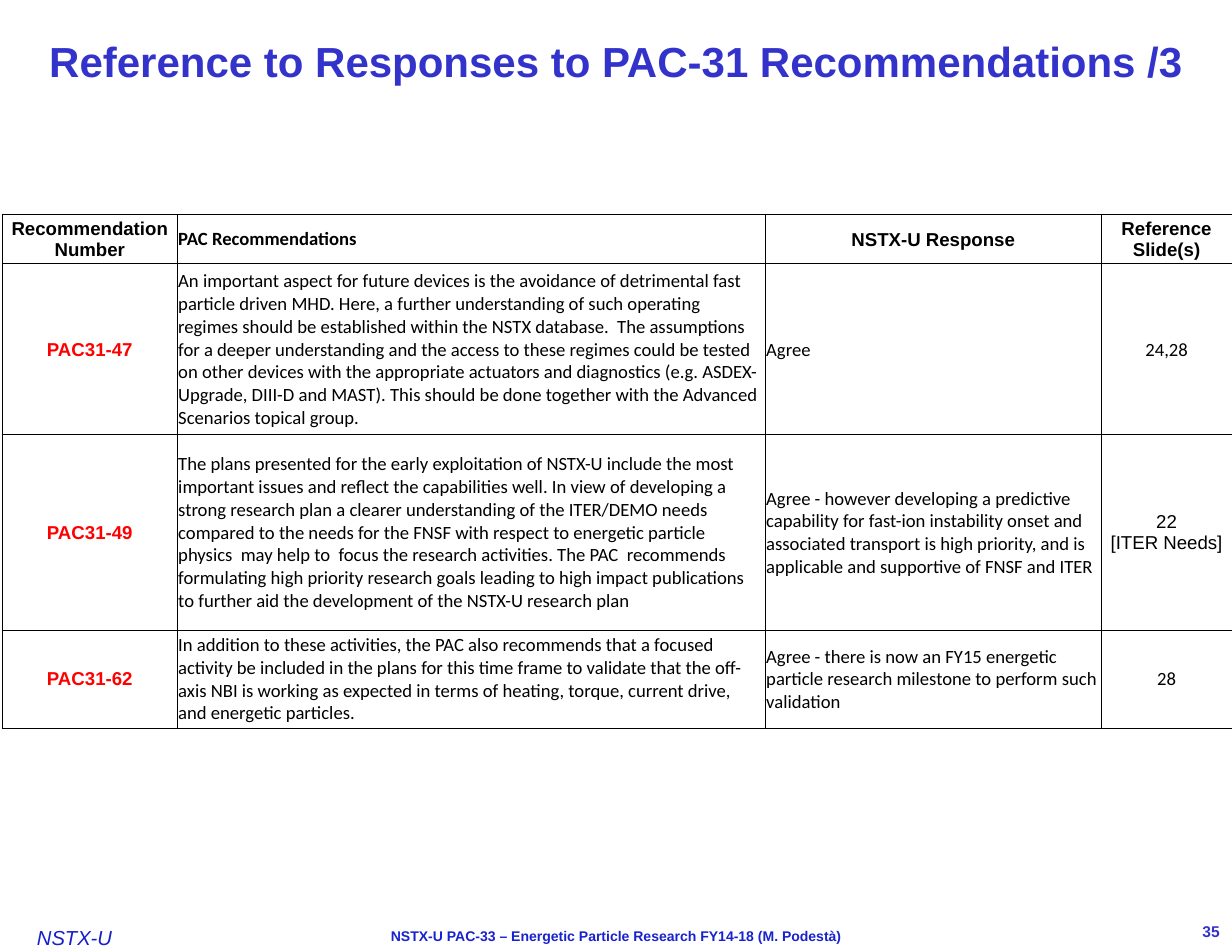
from dataclasses import dataclass

from lxml.etree import SubElement
from pptx import Presentation
from pptx.dml.color import RGBColor as RGB
from pptx.enum.text import MSO_ANCHOR as Anchor, PP_ALIGN as Align
from pptx.oxml.ns import qn
from pptx.util import Pt


@dataclass(frozen=True)
class Theme:
    head: str = "Arial"
    body: str = "Calibri"
    title: RGB = RGB(0x33, 0x33, 0xCC)
    tag: RGB = RGB(0x17, 0x1F, 0xC7)
    foot: RGB = RGB(0x18, 0x22, 0xCD)
    ink: RGB = RGB(0, 0, 0)
    code: RGB = RGB(0xFF, 0, 0)
    big: int = 27
    mid: int = 13
    cell: int = 12
    page: int = 10
    small: int = 9


T = Theme()
WIDE, HIGH = 792, 612
PAD = (7.92, 4.32, 7.92, 4.32)

COLS = [112.5, 378, 216, 84]
ROWS = [31.5, 110, 125.5, 63]
HEADS = ["Recommendation Number", "PAC Recommendations",
         "NSTX-U Response", "Reference Slide(s)"]
ITEMS = [
    ["PAC31-47",
     "An important aspect for future devices is the avoidance of detrimental "
     "fast particle driven MHD. Here, a further understanding of such "
     "operating regimes should be established within the NSTX database.  The "
     "assumptions for a deeper understanding and the access to these regimes "
     "could be tested on other devices with the appropriate actuators and "
     "diagnostics (e.g. ASDEX-Upgrade, DIII-D and MAST). This should be done "
     "together with the Advanced Scenarios topical group.",
     "Agree", "24,28"],
    ["PAC31-49",
     "The plans presented for the early exploitation of NSTX-U include the "
     "most important issues and reflect the capabilities well. In view of "
     "developing a strong research plan a clearer understanding of the "
     "ITER/DEMO needs compared to the needs for the FNSF with respect to "
     "energetic particle physics  may help to  focus the research activities. "
     "The PAC  recommends formulating high priority research goals leading to "
     "high impact publications to further aid the development of the NSTX-U "
     "research plan",
     "Agree - however developing a predictive capability for fast-ion "
     "instability onset and associated transport is high priority, and is "
     "applicable and supportive of FNSF and ITER",
     "22\n[ITER Needs]"],
    ["PAC31-62",
     "In addition to these activities, the PAC also recommends that a focused "
     "activity be included in the plans for this time frame to validate that "
     "the off-axis NBI is working as expected in terms of heating, torque, "
     "current drive, and energetic particles.",
     "Agree - there is now an FY15 energetic particle research milestone to "
     "perform such validation",
     "28"],
]


def style(frame, size, color, face=T.head, bold=False, slant=False,
          align=Align.LEFT):
    for para in frame.paragraphs:
        para.alignment = align
        font = para.font
        font.name, font.size, font.color.rgb = face, Pt(size), color
        font.bold, font.italic = bold, slant


def inset(item, pad):
    """Set the margins of a text frame or a table cell."""
    (item.margin_left, item.margin_top,
     item.margin_right, item.margin_bottom) = map(Pt, pad)


def place(shape, box):
    shape.left, shape.top, shape.width, shape.height = map(Pt, box)


def title(slide, text, box):
    shape = slide.shapes.title
    place(shape, box)
    frame = shape.text_frame
    frame.text = text
    frame.word_wrap = True
    frame.vertical_anchor = Anchor.MIDDLE
    inset(frame, PAD)
    style(frame, T.big, T.title, bold=True, align=Align.CENTER)


def label(slide, text, box, size, color, pad=PAD, anchor=Anchor.TOP, **look):
    frame = slide.shapes.add_textbox(*map(Pt, box)).text_frame
    frame.text = text
    frame.word_wrap = True
    frame.vertical_anchor = anchor
    inset(frame, pad)
    style(frame, size, color, **look)


def footer(slide, box):
    """Place the project tag, talk name and page number along a strip."""
    x, y, w, h = box
    label(slide, "NSTX-U", (x + 23.75, y, 68.5, 16), T.mid, T.tag,
          pad=(0, 2.6, 0, 0), slant=True)
    label(slide,
          "NSTX-U PAC-33 – Energetic Particle Research FY14-18 (M. Podestà)",
          (x + w * 0.2, y, w * 0.6, h), T.small, T.foot,
          bold=True, align=Align.CENTER)
    label(slide, "35", (x + w - 66, y, 66, 13.5), T.page, T.title,
          anchor=Anchor.MIDDLE, bold=True, align=Align.RIGHT)


def border(cell):
    props = cell._tc.get_or_add_tcPr()
    for side in ("a:lnL", "a:lnR", "a:lnT", "a:lnB"):
        line = SubElement(props, qn(side), w=str(Pt(0.5)))
        fill = SubElement(line, qn("a:solidFill"))
        SubElement(fill, qn("a:srgbClr"), val=str(T.ink))


def look(row, col):
    """Return the font settings for a cell of the table."""
    head, code = row == 0, col == 0
    left = col == 2 and not head or col == 1
    arial = code or head and col != 1 or (row, col) == (2, 3)
    return dict(face=T.head if arial else T.body,
                color=T.code if code and not head else T.ink,
                bold=head or code,
                align=Align.LEFT if left else Align.CENTER)


def table(slide, box):
    x, y = box
    data = [HEADS] + ITEMS
    grid = slide.shapes.add_table(
        len(ROWS), len(COLS),
        *map(Pt, (x, y, sum(COLS), sum(ROWS)))).table
    grid.first_row = grid.horz_banding = False
    for col, width in zip(grid.columns, COLS):
        col.width = Pt(width)
    for r, (row, high) in enumerate(zip(grid.rows, ROWS)):
        row.height = Pt(high)
        for c, cell in enumerate(row.cells):
            cell.text = data[r][c]
            cell.vertical_anchor = Anchor.MIDDLE
            inset(cell, (0.6, 0.6, 0.6, 0))
            border(cell)
            cell.fill.background()
            style(cell.text_frame, T.cell, **look(r, c))


def main():
    deck = Presentation()
    deck.slide_width, deck.slide_height = Pt(WIDE), Pt(HIGH)
    slide = deck.slides.add_slide(deck.slide_layouts[5])
    footer(slide, (0, 592, WIDE, 30))
    title(slide, "Reference to Responses to PAC-31 Recommendations /3",
          (0, 0, WIDE, 78.5))
    table(slide, (1.5, 138))
    deck.save("out.pptx")


if __name__ == "__main__":
    main()
